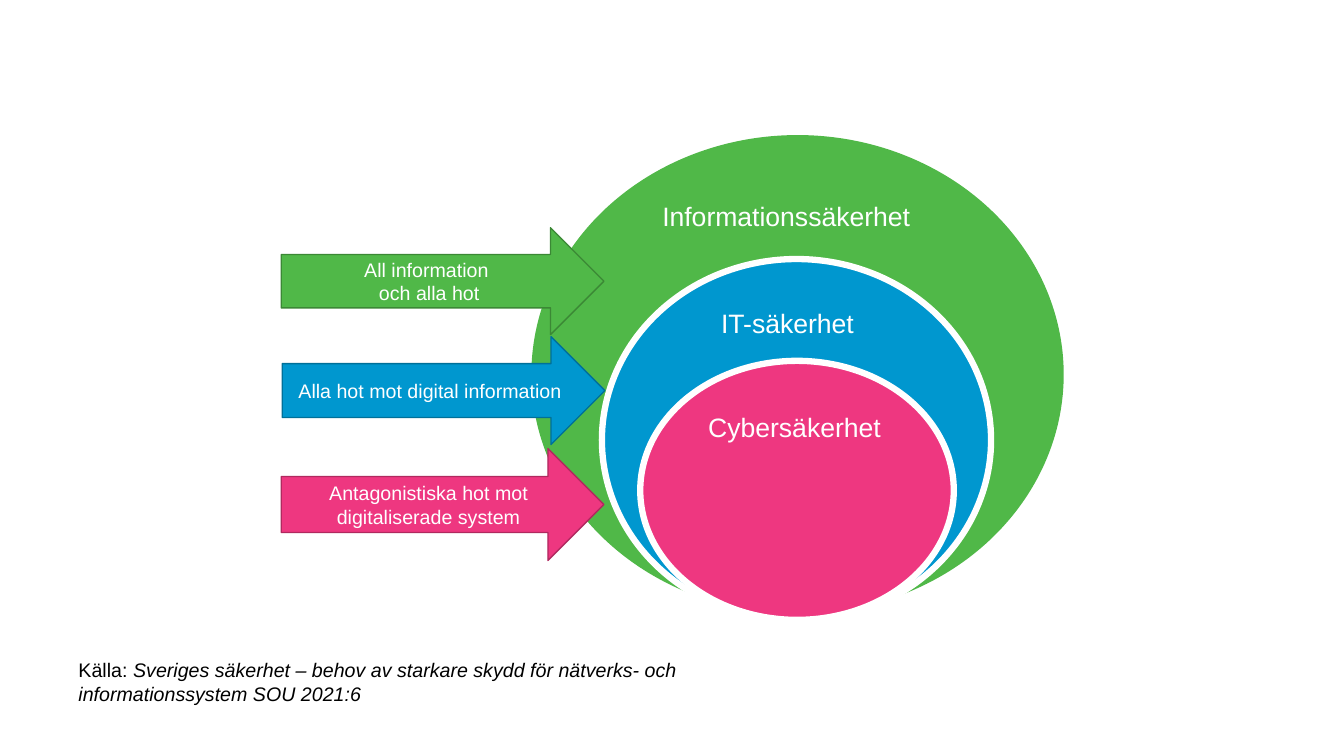
from pptx import Presentation
from pptx.dml.color import RGBColor
from pptx.enum.shapes import MSO_SHAPE
from pptx.enum.text import MSO_ANCHOR, PP_ALIGN
from pptx.util import Emu, Pt

PX = 9144
FONT = "Arial"
WHITE = RGBColor(0xFF, 0xFF, 0xFF)
BLACK = RGBColor(0x00, 0x00, 0x00)
GREEN = RGBColor(0x50, 0xB8, 0x48)
DARK_GREEN = RGBColor(0x3B, 0x88, 0x35)
BLUE = RGBColor(0x00, 0x97, 0xCF)
DARK_BLUE = RGBColor(0x00, 0x70, 0x99)
PINK = RGBColor(0xEE, 0x37, 0x80)
DARK_PINK = RGBColor(0xB0, 0x29, 0x5F)


def px(*lengths):
    return [Emu(length * PX) for length in lengths]


def write_text(shape, paragraphs, size=14, color=WHITE, align=PP_ALIGN.CENTER,
               anchor=MSO_ANCHOR.TOP):
    frame = shape.text_frame
    frame.word_wrap = True
    frame.vertical_anchor = anchor
    for index, runs in enumerate(paragraphs):
        paragraph = frame.add_paragraph() if index else frame.paragraphs[0]
        paragraph.alignment = align
        for text, italic in runs:
            run = paragraph.add_run()
            run.text = text
            run.font.name = FONT
            run.font.size = Pt(size)
            run.font.italic = italic
            run.font.color.rgb = color


def add_filled_shape(slide, kind, box, fill, line=None, line_width=1):
    shape = slide.shapes.add_shape(kind, *px(*box))
    shape.shadow.inherit = False
    shape.fill.solid()
    shape.fill.fore_color.rgb = fill
    if line is None:
        shape.line.fill.background()
    else:
        shape.line.color.rgb = line
        shape.line.width = Pt(line_width)
    return shape


def add_security_circles(slide, left, top):
    circles = [
        ("Informationssäkerhet", GREEN, None, (0, 0, 528, 475), (120, 59)),
        ("IT-säkerhet", BLUE, WHITE, (70, 123, 386, 359), (120, 166)),
        ("Cybersäkerhet", PINK, WHITE, (108, 224, 311, 257), (127, 269)),
    ]
    for name, fill, line, (x, y, width, height), (label_x, label_y) in circles:
        add_filled_shape(slide, MSO_SHAPE.OVAL, (left + x, top + y, width, height),
                         fill, line, 4.5)
        label = slide.shapes.add_textbox(*px(left + label_x, top + label_y, 268, 42))
        align = PP_ALIGN.CENTER if line else PP_ALIGN.LEFT
        write_text(label, [[(name, False)]], size=19, align=align)


def add_threat_arrows(slide, left, top, width):
    arrows = [
        (["All information ", "och alla hot"], GREEN, DARK_GREEN, 0, 0, 106),
        (["Alla hot mot digital information"], BLUE, DARK_BLUE, 1, 108, 107),
        (["Antagonistiska hot mot digitaliserade system"], PINK, DARK_PINK, 0, 219, 111),
    ]
    for lines, fill, line, x, y, height in arrows:
        arrow = add_filled_shape(slide, MSO_SHAPE.RIGHT_ARROW,
                                 (left + x, top + y, width, height), fill, line)
        write_text(arrow, [[(text, False)] for text in lines], anchor=MSO_ANCHOR.MIDDLE)


def add_source(slide, left, top, width, height):
    source = slide.shapes.add_textbox(*px(left, top, width, height))
    title = ("Sveriges säkerhet – behov av starkare skydd för nätverks- och "
             "informationssystem SOU 2021:6")
    write_text(source, [[("Källa: ", False), (title, True)]],
               color=BLACK, align=PP_ALIGN.LEFT)


def main():
    presentation = Presentation()
    presentation.slide_width, presentation.slide_height = px(1333, 750)
    slide = presentation.slides.add_slide(presentation.slide_layouts[6])
    add_security_circles(slide, 527, 134)
    add_threat_arrows(slide, 279, 226, 320)
    add_source(slide, 68, 648, 667, 57)
    presentation.save("out.pptx")


if __name__ == "__main__":
    main()
